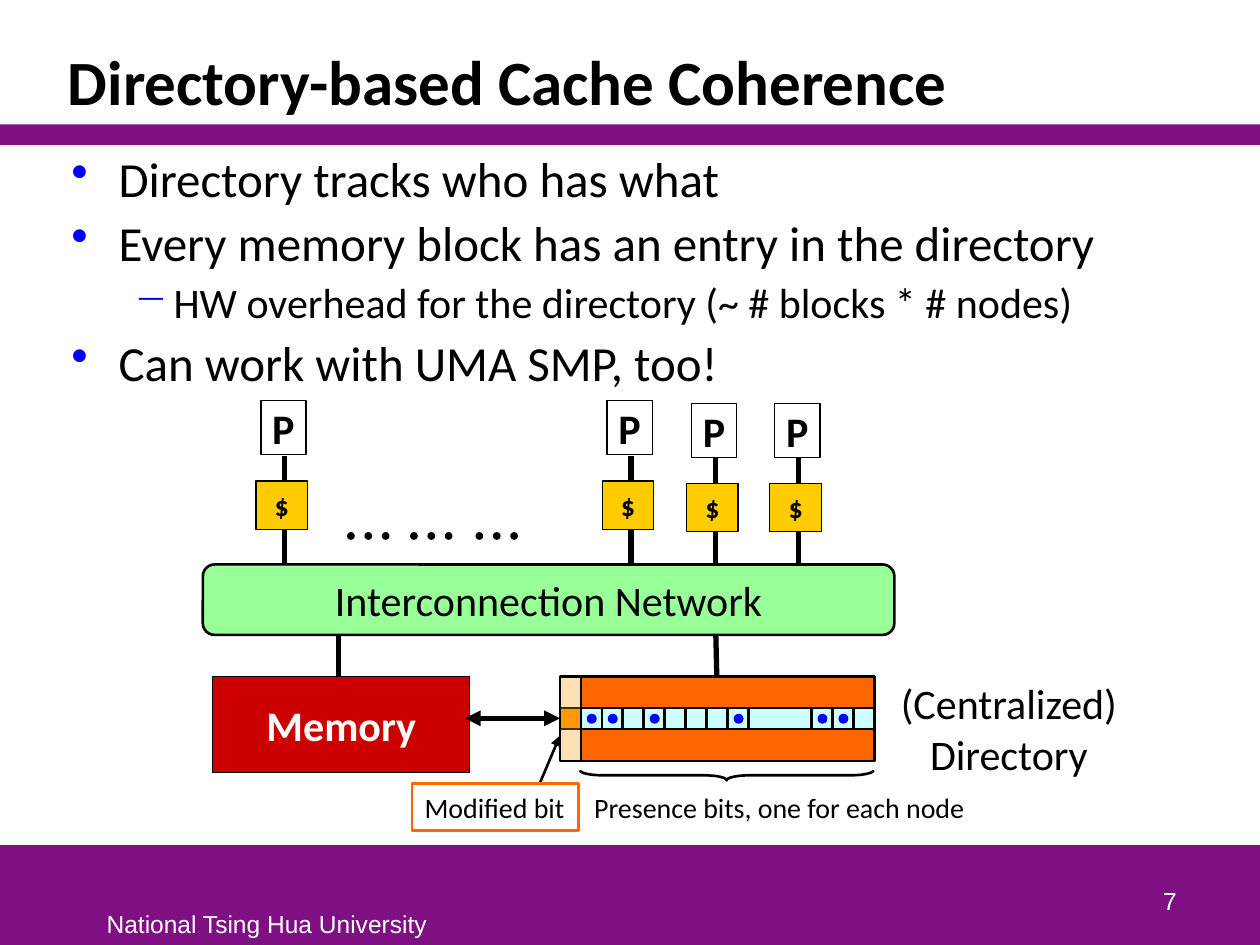
"""Build the slide on directory-based cache coherence."""
from dataclasses import dataclass

import lxml.etree
import pptx
import pptx.dml.color
import pptx.enum.shapes
import pptx.enum.text
import pptx.oxml.ns
import pptx.util

Cm = pptx.util.Cm
Pt = pptx.util.Pt
qn = pptx.oxml.ns.qn
SHAPE = pptx.enum.shapes.MSO_SHAPE
ALIGN = pptx.enum.text.PP_ALIGN
ANCHOR = pptx.enum.text.MSO_ANCHOR

COLORS = {
    "purple": "7F1084", "black": "000000", "white": "FFFFFF", "blue": "0000FF",
    "cache": "FFCC00", "memory": "CC0000", "network": "99FF99",
    "directory": "FF6600", "presence": "CCFFFF", "modified": "FF9900",
}


@dataclass
class Box:
    x: float
    y: float
    w: float
    h: float


@dataclass
class Bullet:
    text: str
    size: int = 28
    mark: str = "•"
    left: float = 0.95
    hang: float = 0.95
    level: int = 0
    before: float = 3


@dataclass
class Node:
    x: float
    y: float


def rgb(name: str) -> pptx.dml.color.RGBColor:
    return pptx.dml.color.RGBColor.from_string(COLORS[name])


def write(tf, text: str, *, size: float, font="Calibri", color="black", bold=False,
          align=ALIGN.LEFT, before=None, spacing=None):
    p = tf.add_paragraph() if tf.text else tf.paragraphs[0]
    p.alignment = align
    if before:
        p.space_before = Pt(before)
    if spacing:
        p.line_spacing = spacing
    r = p.add_run()
    r.text = text
    r.font.name, r.font.size, r.font.bold = font, Pt(size), bold
    r.font.color.rgb = rgb(color)
    return p


def add_text(slide, box: Box, anchor=ANCHOR.TOP, wrap=False):
    tf = slide.shapes.add_textbox(Cm(box.x), Cm(box.y), Cm(box.w), Cm(box.h)).text_frame
    tf.word_wrap = wrap
    tf.vertical_anchor = anchor
    return tf


def add_shape(slide, kind, box: Box, fill=None, line=None, width=0.75, alpha=None):
    s = slide.shapes.add_shape(kind, Cm(box.x), Cm(box.y), Cm(box.w), Cm(box.h))
    s.shadow.inherit = False
    if fill:
        s.fill.solid()
        s.fill.fore_color.rgb = rgb(fill)
    else:
        s.fill.background()
    if alpha:
        clr = s.fill._xPr.find(qn("a:solidFill"))[0]
        lxml.etree.SubElement(clr, qn("a:alpha"), val=str(alpha * 1000))
    if line:
        s.line.color.rgb = rgb(line)
        s.line.width = Pt(width)
    else:
        s.line.fill.background()
    s.text_frame.word_wrap = False
    s.text_frame.vertical_anchor = ANCHOR.MIDDLE
    return s


def add_line(slide, x1: float, y1: float, x2: float, y2: float, width=3.0, ends=()):
    s = slide.shapes.add_connector(pptx.enum.shapes.MSO_CONNECTOR.STRAIGHT,
                                   Cm(x1), Cm(y1), Cm(x2), Cm(y2))
    s.line.color.rgb = rgb("black")
    s.line.width = Pt(width)
    ln = s.line._get_or_add_ln()
    for end in ends:
        lxml.etree.SubElement(ln, qn(f"a:{end}"), type="triangle")
    lxml.etree.SubElement(s._element.spPr, qn("a:effectLst"))


def add_bullet(tf, item: Bullet) -> None:
    p = write(tf, item.text, size=item.size, before=item.before)
    p.level = item.level
    pPr = p._p.get_or_add_pPr()
    pPr.set("marL", str(Cm(item.left)))
    pPr.set("indent", str(-Cm(item.hang)))
    clr = lxml.etree.SubElement(pPr, qn("a:buClr"))
    lxml.etree.SubElement(clr, qn("a:srgbClr"), val=COLORS["blue"])
    lxml.etree.SubElement(pPr, qn("a:buChar"), char=item.mark)


def add_node(slide, node: Node) -> None:
    x, y = node.x, node.y
    s = add_shape(slide, SHAPE.RECTANGLE, Box(x, y, 0.91, 1.09), "white", "black")
    write(s.text_frame, "P", size=24, bold=True, align=ALIGN.CENTER)
    add_line(slide, x + 0.48, y + 1.11, x + 0.48, y + 3.43)
    s = add_shape(slide, SHAPE.RECTANGLE, Box(x - 0.1, y + 1.62, 1.04, 0.97), "cache", "black")
    write(s.text_frame, "$", size=16, bold=True, align=ALIGN.CENTER)


def add_frame(slide) -> None:
    for box in (Box(0, 17.04, 25.4, 2.01), Box(0, 2.51, 25.4, 0.41)):
        add_shape(slide, SHAPE.RECTANGLE, box, "purple")
    tf = add_text(slide, Box(1.9, 18.21, 7.01, 0.84))
    write(tf, "National Tsing Hua University", size=14, font="Arial", color="white")
    tf = add_text(slide, Box(18.69, 17.3, 5.28, 1.27), ANCHOR.BOTTOM, True)
    write(tf, "7", size=14, font="Arial", color="white", align=ALIGN.RIGHT)
    tf = add_text(slide, Box(1.12, 0.64, 22.78, 1.88), ANCHOR.BOTTOM, True)
    write(tf, "Directory-based Cache Coherence", size=36, bold=True, spacing=0.85)


def add_directory(slide) -> None:
    x, y, w, h = 11.71, 13.64, 5.92, 1.7
    bit, row = w / 14, 14.27
    add_shape(slide, SHAPE.RECTANGLE, Box(x, y, w, h), "directory", "black", 1.5)
    for first, span in [(i, 1) for i in range(8)] + [(8, 3), (11, 1), (12, 1), (13, 1)]:
        add_shape(slide, SHAPE.RECTANGLE, Box(x + first * bit, row, span * bit, bit),
                  "presence", "black", 1.5)
    for i in (0, 1, 3, 7, 11, 12):
        add_shape(slide, SHAPE.OVAL, Box(x + i * bit + 0.12, row + 0.12, 0.2, 0.2), "blue")
    add_line(slide, 9.37, 14.48, x - bit, 14.48, ends=("headEnd", "tailEnd"))
    add_line(slide, 14.43, 12.8, 14.45, y)
    tf = add_text(slide, Box(17.91, 13.54, 4.93, 2.31))
    write(tf, "(Centralized)", size=24)
    write(tf, "Directory", size=24, align=ALIGN.CENTER)
    add_shape(slide, SHAPE.RECTANGLE, Box(x - bit, row, bit, bit), "modified", "black", 1.5)
    add_shape(slide, SHAPE.RECTANGLE, Box(x - bit, y, bit, h), "modified", "black", 1.5, alpha=29)
    add_line(slide, 10.87, 15.82, x - bit, 14.83, 1.5, ("tailEnd",))
    s = add_shape(slide, SHAPE.RECTANGLE, Box(8.31, 15.8, 3.35, 0.94), line="directory", width=1.5)
    write(s.text_frame, "Modified bit", size=16)
    s = add_shape(slide, SHAPE.RIGHT_BRACE, Box(14.55, 12.67, 0.2, w), line="black", width=1.5)
    s.rotation = 90
    s.adjustments[0] = 2.33
    write(add_text(slide, Box(11.73, 15.82, 8.08, 0.94)), "Presence bits, one for each node", size=16)


def main() -> None:
    prs = pptx.Presentation()
    prs.slide_width, prs.slide_height = Cm(25.4), Cm(19.05)
    slide = prs.slides.add_slide(prs.slide_layouts[6])
    add_frame(slide)
    tf = add_text(slide, Box(1.19, 2.87, 22.71, 14.05), wrap=True)
    for item in (
        Bullet("Directory tracks who has what", before=0),
        Bullet("Every memory block has an entry in the directory"),
        Bullet("HW overhead for the directory (~ # blocks * # nodes)", 24, "−", 2.06, 0.79, 1),
        Bullet("Can work with UMA SMP, too!"),
    ):
        add_bullet(tf, item)
    for node in (Node(5.26, 8.08), Node(12.24, 8.08), Node(13.94, 8.13), Node(15.62, 8.13)):
        add_node(slide, node)
    for x in (7.01, 8.28, 9.6):
        for i in range(3):
            add_shape(slide, SHAPE.OVAL, Box(x + i * 0.35, 10.74, 0.13, 0.13), "black", "black")
    s = add_shape(slide, SHAPE.RECTANGLE, Box(4.29, 13.64, 5.18, 1.93), "memory", "black")
    write(s.text_frame, "Memory", size=24, color="white", bold=True, align=ALIGN.CENTER)
    add_line(slide, 6.83, 12.57, 6.83, 13.64)
    s = add_shape(slide, SHAPE.ROUNDED_RECTANGLE, Box(4.09, 11.38, 13.94, 1.42),
                  "network", "black", 1.5)
    write(s.text_frame, "Interconnection Network", size=24, align=ALIGN.CENTER)
    add_directory(slide)
    prs.save("out.pptx")


if __name__ == "__main__":
    main()
